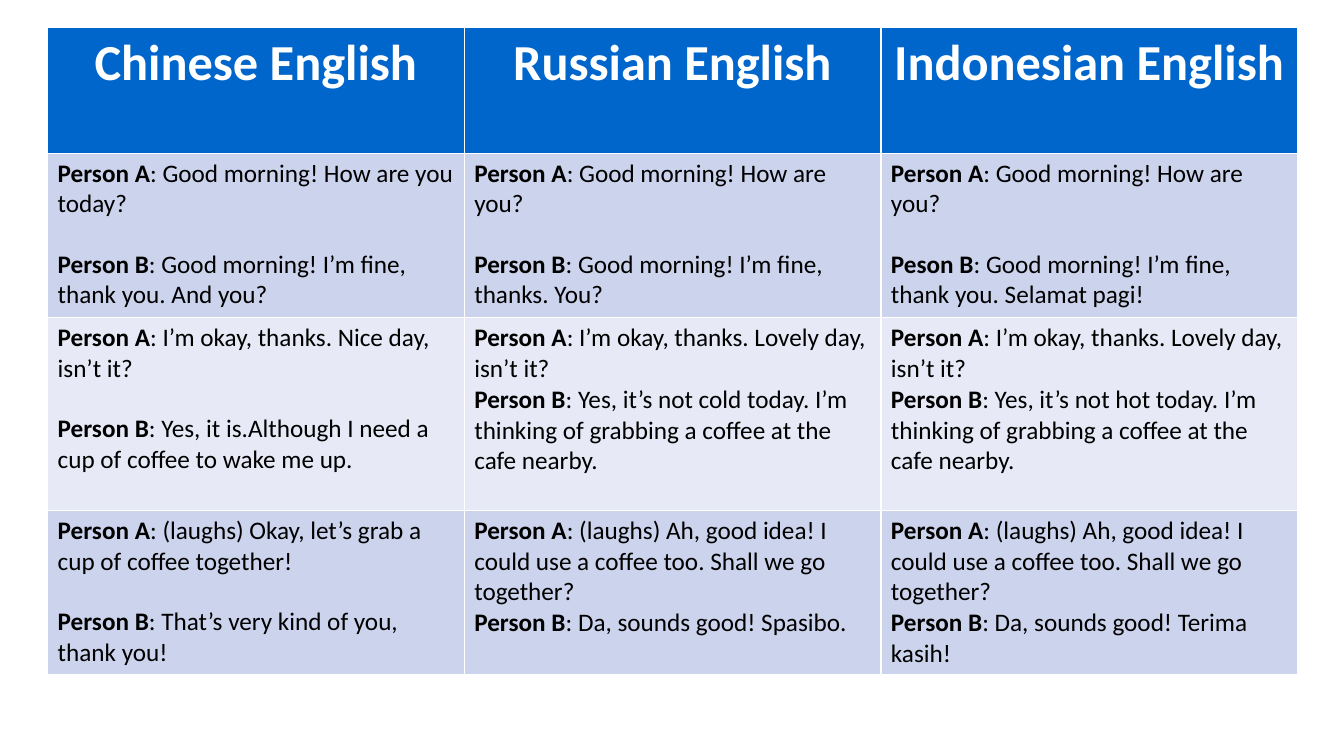
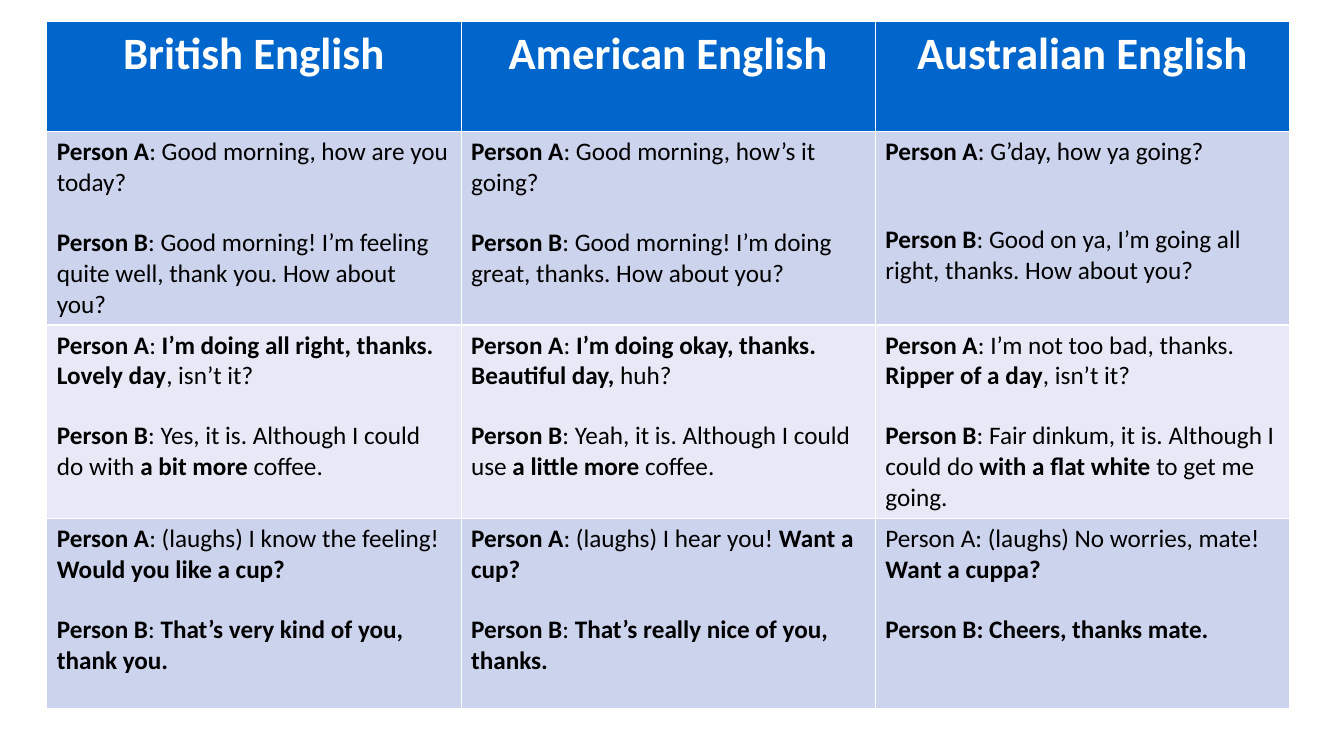
from pptx import Presentation
from pptx.dml.color import RGBColor
from pptx.enum.text import PP_ALIGN
from pptx.util import Cm, Pt

CENTER = PP_ALIGN.CENTER
BLANK_LAYOUT = 6

FONT = "Calibri"
HEADER_FILL = "0066CC"
HEADER_TEXT = "FFFFFF"
BODY_TEXT = "000000"
BAND_FILLS = ("CCD3EC", "E7EAF6")
BODY_SIZE = 18

# Space in points between the two speakers of a cell
SNUG, APART, FAR = 0, 21, 41

# Each cell: gap, line of person A, line of person B; *stars* mark bold words
ASIAN_AND_RUSSIAN = {
    "Chinese English": [
        (APART, "*Person A*: Good morning! How are you today?",
         "*Person B*: Good morning! I’m fine, thank you. And you?"),
        (APART, "*Person A*: I’m okay, thanks. Nice day, isn’t it?",
         "*Person B*: Yes, it is.Although I need a cup of coffee to wake me up."),
        (APART, "*Person A*: (laughs) Okay, let’s grab a cup of coffee together!",
         "*Person B*: That’s very kind of you, thank you!"),
    ],
    "Russian English": [
        (APART, "*Person A*: Good morning! How are you?",
         "*Person B*: Good morning! I’m fine, thanks. You?"),
        (SNUG, "*Person A*: I’m okay, thanks. Lovely day, isn’t it?",
         "*Person B*: Yes, it’s not cold today. I’m thinking of grabbing "
         "a coffee at the cafe nearby."),
        (SNUG, "*Person A*: (laughs) Ah, good idea! I could use a coffee too. "
         "Shall we go together?",
         "*Person B*: Da, sounds good! Spasibo."),
    ],
    "Indonesian English": [
        (APART, "*Person A*: Good morning! How are you?",
         "*Peson B*: Good morning! I’m fine, thank you. Selamat pagi!"),
        (SNUG, "*Person A*: I’m okay, thanks. Lovely day, isn’t it?",
         "*Person B*: Yes, it’s not hot today. I’m thinking of grabbing "
         "a coffee at the cafe nearby."),
        (SNUG, "*Person A*: (laughs) Ah, good idea! I could use a coffee too. "
         "Shall we go together?",
         "*Person B*: Da, sounds good! Terima kasih!"),
    ],
}

NATIVE = {
    "British English": [
        (APART, "*Person A*: Good morning, how are you today?",
         "*Person B*: Good morning! I’m feeling quite well, thank you. "
         "How about you?"),
        (APART, "*Person A*: *I’m doing all right, thanks. Lovely day*, isn’t it?",
         "*Person B*: Yes, it is. Although I could do with *a bit more* coffee."),
        (APART, "*Person A*: (laughs) I know the feeling! *Would you like a cup?*",
         "*Person B*: *That’s very kind of you, thank you.*"),
    ],
    "American English": [
        (APART, "*Person A*: Good morning, how’s it going?",
         "*Person B*: Good morning! I’m doing great, thanks. How about you?"),
        (APART, "*Person A*:* I’m doing okay, thanks. Beautiful day, *huh?",
         "*Person B*: Yeah, it is. Although I could use *a little more* coffee."),
        (APART, "*Person A*: (laughs) I hear you! *Want a cup?*",
         "*Person B*: *That’s really nice of you, thanks.*"),
    ],
    "Australian English": [
        (FAR, "*Person A*: G’day, how ya going?",
         "*Person B*: Good on ya, I’m going all right, thanks. How about you?"),
        (APART, "*Person A*: I’m not too bad, thanks. *Ripper of a day*, isn’t it?",
         "*Person B*: Fair dinkum, it is. Although I could do* with a flat white* "
         "to get me going."),
        (APART, "Person A: (laughs) No worries, mate! *Want a cuppa?*",
         "*Person B: Cheers, thanks mate.*"),
    ],
}


def color(hex_string):
    return RGBColor.from_string(hex_string)


def fill_cell(cell, hex_string):
    cell.fill.solid()
    cell.fill.fore_color.rgb = color(hex_string)


def style_paragraph(paragraph, size, hex_string):
    paragraph.font.name = FONT
    paragraph.font.size = Pt(size)
    paragraph.font.color.rgb = color(hex_string)


def write_header(cell, variety, size):
    fill_cell(cell, HEADER_FILL)
    heading = cell.text_frame.paragraphs[0]
    heading.text = variety
    heading.alignment = CENTER
    style_paragraph(heading, size, HEADER_TEXT)
    heading.font.bold = True


def write_line(paragraph, marked_text):
    """Write one speaker's line; every second part between stars is bold."""
    style_paragraph(paragraph, BODY_SIZE, BODY_TEXT)
    for index, part in enumerate(marked_text.split("*")):
        if part:
            run = paragraph.add_run()
            run.text = part
            run.font.bold = index % 2 == 1


def write_exchange(cell, exchange, band_fill):
    fill_cell(cell, band_fill)
    gap, line_a, line_b = exchange
    write_line(cell.text_frame.paragraphs[0], line_a)
    reply = cell.text_frame.add_paragraph()
    reply.space_before = Pt(gap)
    write_line(reply, line_b)


def add_dialogue_slide(prs, dialogues, left, top, column_width, row_heights,
                       header_size):
    """Add a slide with one column of dialogue for each variety of English."""
    slide = prs.slides.add_slide(prs.slide_layouts[BLANK_LAYOUT])
    table = slide.shapes.add_table(
        len(row_heights), len(dialogues), Cm(left), Cm(top),
        Cm(column_width * len(dialogues)), Cm(sum(row_heights))).table
    for row, height in zip(table.rows, row_heights):
        row.height = Cm(height)

    for col, (variety, exchanges) in enumerate(dialogues.items()):
        table.columns[col].width = Cm(column_width)
        write_header(table.cell(0, col), variety, header_size)
        for index, exchange in enumerate(exchanges):
            write_exchange(table.cell(index + 1, col), exchange,
                           BAND_FILLS[index % 2])


def main():
    prs = Presentation()
    prs.slide_width, prs.slide_height = Cm(33.87), Cm(19.05)
    add_dialogue_slide(prs, ASIAN_AND_RUSSIAN, 1.2, 0.7, 10.5,
                       (3.16, 4.15, 4.85, 4.15), header_size=36)
    add_dialogue_slide(prs, NATIVE, 1.18, 0.54, 10.44,
                       (2.78, 4.8, 4.85, 4.8), header_size=32)
    prs.save("out.pptx")


if __name__ == "__main__":
    main()
